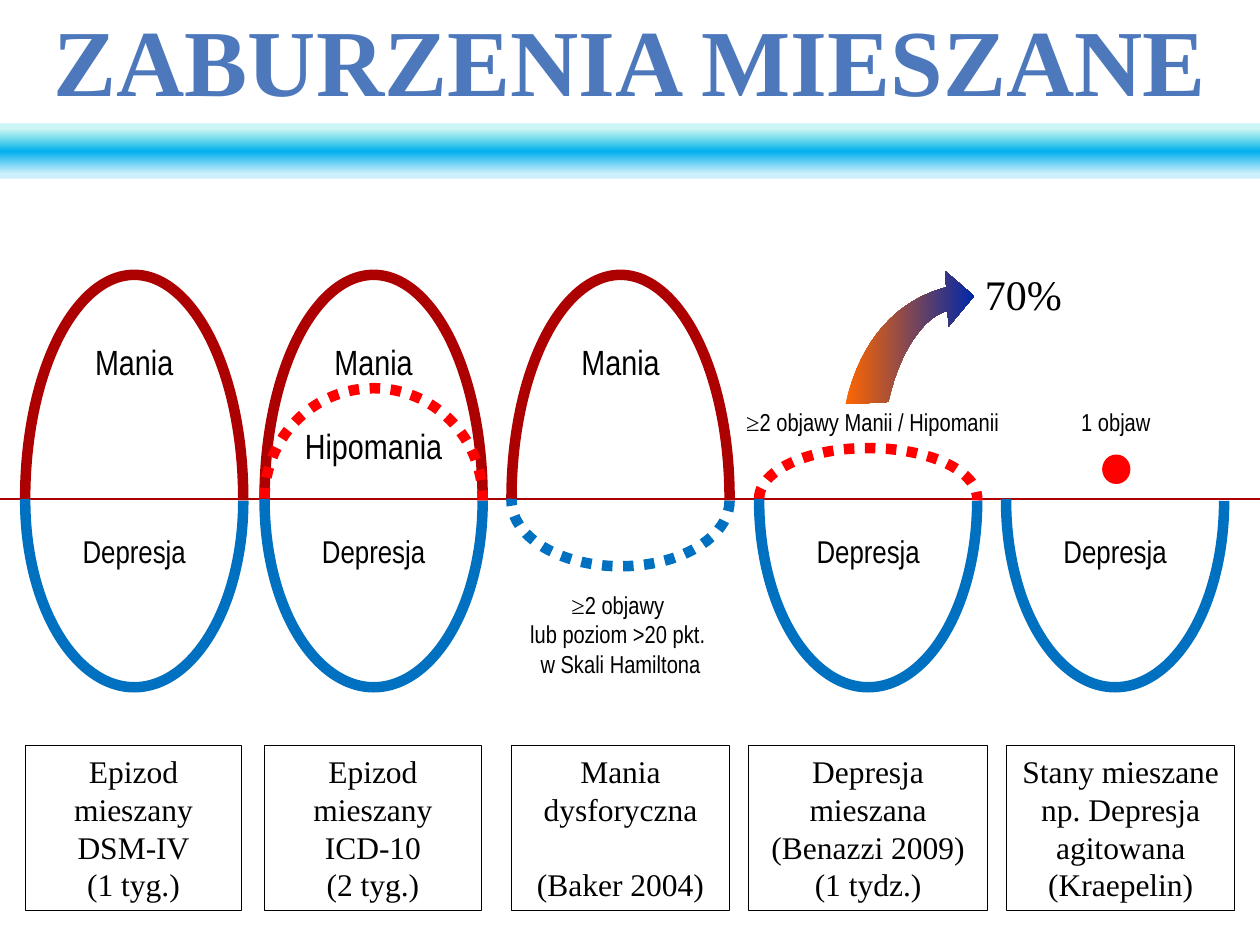
from dataclasses import dataclass
from lxml import etree
from pptx import Presentation
from pptx import util as u
from pptx.dml.color import RGBColor
from pptx.enum import dml, shapes, text
from pptx.oxml.ns import qn


@dataclass(frozen=True)
class Theme:
    serif: str = "Times New Roman"
    narrow: str = "Arial Narrow"
    ink: str = "000000"
    mania: str = "AD0101"
    symptom: str = "FF0000"
    depression: str = "0070C0"
    title_stops: tuple = ((0, "7494C9", 100), (49, "4D79BC", 100), (50, "346AAA", 100),
                          (92, "325F94", 100), (100, "315D91", 100))
    band_stops: tuple = ((10, "00CCCC", 20), (50, "00B0F0", 100), (90, "00B0F0", 20))
    arrow_stops: tuple = ((0, "FF6600", 100), (100, "0028A8", 100))
    title: int = 54
    percent: int = 24
    pole: int = 20
    body: int = 18
    note: int = 14
    leading: float = 1.2


def bezier(a, b, c, d, steps=16):
    for i in range(1, steps + 1):
        t = i / steps
        yield tuple((1 - t) ** 3 * p + 3 * (1 - t) ** 2 * t * q
                    + 3 * (1 - t) * t ** 2 * r + t ** 3 * s
                    for p, q, r, s in zip(a, b, c, d))


class Painter:
    def __init__(self, slide, theme):
        self.s = slide
        self.th = theme

    def gradient(self, fill, element, stops, angle):
        fill.gradient()
        fill.gradient_angle = angle
        gs_list = element.find(".//" + qn("a:gsLst"))
        for gs in list(gs_list):
            gs_list.remove(gs)
        for pos, color, alpha in stops:
            gs = etree.SubElement(gs_list, qn("a:gs"), pos=str(pos * 1000))
            clr = etree.SubElement(gs, qn("a:srgbClr"), val=color)
            if alpha < 100:
                etree.SubElement(clr, qn("a:alpha"), val=str(alpha * 1000))

    def style(self, sp, fill=None, line=None, width=1):
        sp.shadow.inherit = False
        if fill:
            sp.fill.solid()
            sp.fill.fore_color.rgb = RGBColor.from_string(fill)
        else:
            sp.fill.background()
        if line:
            sp.line.color.rgb = RGBColor.from_string(line)
            sp.line.width = u.Pt(width)
        else:
            sp.line.fill.background()

    def shape(self, kind, box, **look):
        sp = self.s.shapes.add_shape(kind, *map(u.Pt, box))
        self.style(sp, **look)
        return sp

    def set_text(self, sp, lines, size, font, align=text.PP_ALIGN.CENTER, gap=0, top=3.6):
        tf = sp.text_frame
        tf.word_wrap = True
        tf.vertical_anchor = text.MSO_ANCHOR.TOP
        tf.margin_left = tf.margin_right = u.Pt(7.2)
        tf.margin_top, tf.margin_bottom = u.Pt(top), u.Pt(3.6)
        tf.text = "\n".join(lines)
        for p, line in zip(tf.paragraphs, lines):
            p.alignment = align
            p.line_spacing = u.Pt(size * self.th.leading)
            if line.startswith("≥"):
                p.text = "≥"
                p.add_run().text = line[1:]
            for r in p.runs:
                r.font.size = u.Pt(size)
                r.font.name = self.th.serif if r.text == "≥" else font
                r.font.color.rgb = RGBColor.from_string(self.th.ink)
        if gap:
            tf.paragraphs[-1].space_before = u.Pt(gap)

    def title(self, words, box):
        sp = self.s.shapes.title
        sp.left, sp.top, sp.width, sp.height = map(u.Pt, box)
        self.set_text(sp, [words], self.th.title, self.th.serif)
        tf = sp.text_frame
        tf.word_wrap = False
        tf.auto_size = text.MSO_AUTO_SIZE.NONE
        r = tf.paragraphs[0].runs[0]
        r.font.bold = True
        self.gradient(r.font.fill, sp._element, self.th.title_stops, 270)

    def label(self, box, lines, size, font, **layout):
        sp = self.s.shapes.add_textbox(*map(u.Pt, box))
        self.set_text(sp, lines, size, font, **layout)

    def caption(self, left, width, lines, gap):
        sp = self.shape(shapes.MSO_SHAPE.RECTANGLE, (left, 426.2, width, 94.3),
                        line=self.th.ink, width=0.5)
        self.set_text(sp, lines, self.th.body, self.th.serif, gap=gap)

    def arc(self, cx, cy, span, rotation, color, dotted=False):
        breadth = 124.6
        sp = self.shape(shapes.MSO_SHAPE.ARC,
                        (cx - span / 2, cy - breadth / 2, span, breadth),
                        line=color, width=6)
        sp.adjustments[0], sp.adjustments[1] = 162, 54.63
        sp.rotation = rotation
        if dotted:
            sp.line.dash_style = dml.MSO_LINE.ROUND_DOT

    def upper(self, cx, span, color, dotted=False):
        self.arc(cx, 284.8, span, 270, color, dotted)

    def lower(self, cx, span, dotted=False):
        self.arc(cx, 286.2, span, 90, self.th.depression, dotted)

    def axis(self, x1, x2, y):
        line = self.s.shapes.add_connector(shapes.MSO_CONNECTOR.STRAIGHT,
                                           *map(u.Pt, (x1, y, x2, y)))
        line.line.color.rgb = RGBColor.from_string(self.th.mania)
        line.line.width = u.Pt(1.25)
        etree.SubElement(line._element.spPr, qn("a:effectLst"))

    def band(self, box):
        sp = self.shape(shapes.MSO_SHAPE.RECTANGLE, box)
        self.gradient(sp.fill, sp._element, self.th.band_stops, 270)

    def arrow(self):
        tail, head = (541.4, 177.8), (540.7, 164.2)
        points = [(540, 154.8), (556.6, 169.2), (542.2, 186.5), tail,
                  *bezier(tail, (532.1, 179.3), (515.5, 194.4), (507.6, 229.7)),
                  (483.1, 231.1),
                  *bezier((483.1, 231.1), (491.8, 193), (513.4, 171.4), head)]
        builder = self.s.shapes.build_freeform(*map(u.Pt, head), scale=1)
        builder.add_line_segments([(u.Pt(x), u.Pt(y)) for x, y in points], close=True)
        sp = builder.convert_to_shape()
        self.style(sp)
        self.gradient(sp.fill, sp._element, self.th.arrow_stops, 0)


def main():
    prs = Presentation()
    prs.slide_width, prs.slide_height = u.Pt(720), u.Pt(540)
    th = Theme()
    d = Painter(prs.slides.add_slide(prs.slide_layouts[5]), th)

    dsm, icd, dysphoric, mixed, agitated = 76.7, 213.5, 354.6, 496.1, 637.2

    d.band((0, 70.6, 720, 31.7))
    d.axis(-2.9, 720, 285.1)
    d.title("ZABURZENIA MIESZANE", (20.2, -2.2, 679.7, 72.7))

    for cx in (dsm, icd, dysphoric):
        d.upper(cx, 255.6, th.mania)
    d.upper(icd, 126, th.symptom, dotted=True)
    d.upper(mixed, 57.6, th.symptom, dotted=True)
    for cx in (dsm, icd, mixed, agitated):
        d.lower(cx, 213.1)
        d.label((cx - 45, 242.6, 90, 90), ["Depresja"], th.body, th.narrow, top=61.2)
    d.lower(dysphoric, 74.9, dotted=True)

    for cx, lines, gap in ((dsm, ["Mania"], 0), (icd, ["Mania", "Hipomania"], 24),
                           (dysphoric, ["Mania"], 0)):
        d.label((cx - 62.3, 190.8, 124.6, 143.3), lines, th.pole, th.narrow, gap=gap)

    d.label((416.2, 229, 164.9, 24.5), ["≥2 objawy Manii / Hipomanii"], th.note, th.narrow)
    d.label((563.8, 229, 147.6, 24.5), ["1 objaw"], th.note, th.narrow)
    d.label((280.8, 333.4, 147.6, 58.3),
            ["≥2 objawy ", "lub poziom >20 pkt. ", "w Skali Hamiltona"], th.note, th.narrow)
    d.shape(shapes.MSO_SHAPE.OVAL, (630.7, 260.6, 14.4, 15.1),
            fill=th.symptom, line=th.symptom, width=1.75)
    d.arrow()
    d.label((555.8, 149.8, 67.7, 36), ["70%"], th.percent, th.serif,
            align=text.PP_ALIGN.LEFT)

    captions = (
        (14.4, 123.8, ["Epizod mieszany", "DSM-IV", "(1 tyg.)"], 0),
        (151.2, 123.8, ["Epizod mieszany", "ICD-10", "(2 tyg.)"], 0),
        (292.3, 124.6, ["Mania dysforyczna", "(Baker 2004)"], 21.6),
        (427.7, 136.8, ["Depresja mieszana", "(Benazzi 2009)", "(1 tydz.)"], 0),
        (575.3, 130.3, ["Stany mieszane np. Depresja agitowana", "(Kraepelin)"], 0),
    )
    for caption in captions:
        d.caption(*caption)
    prs.save("out.pptx")


if __name__ == "__main__":
    main()
